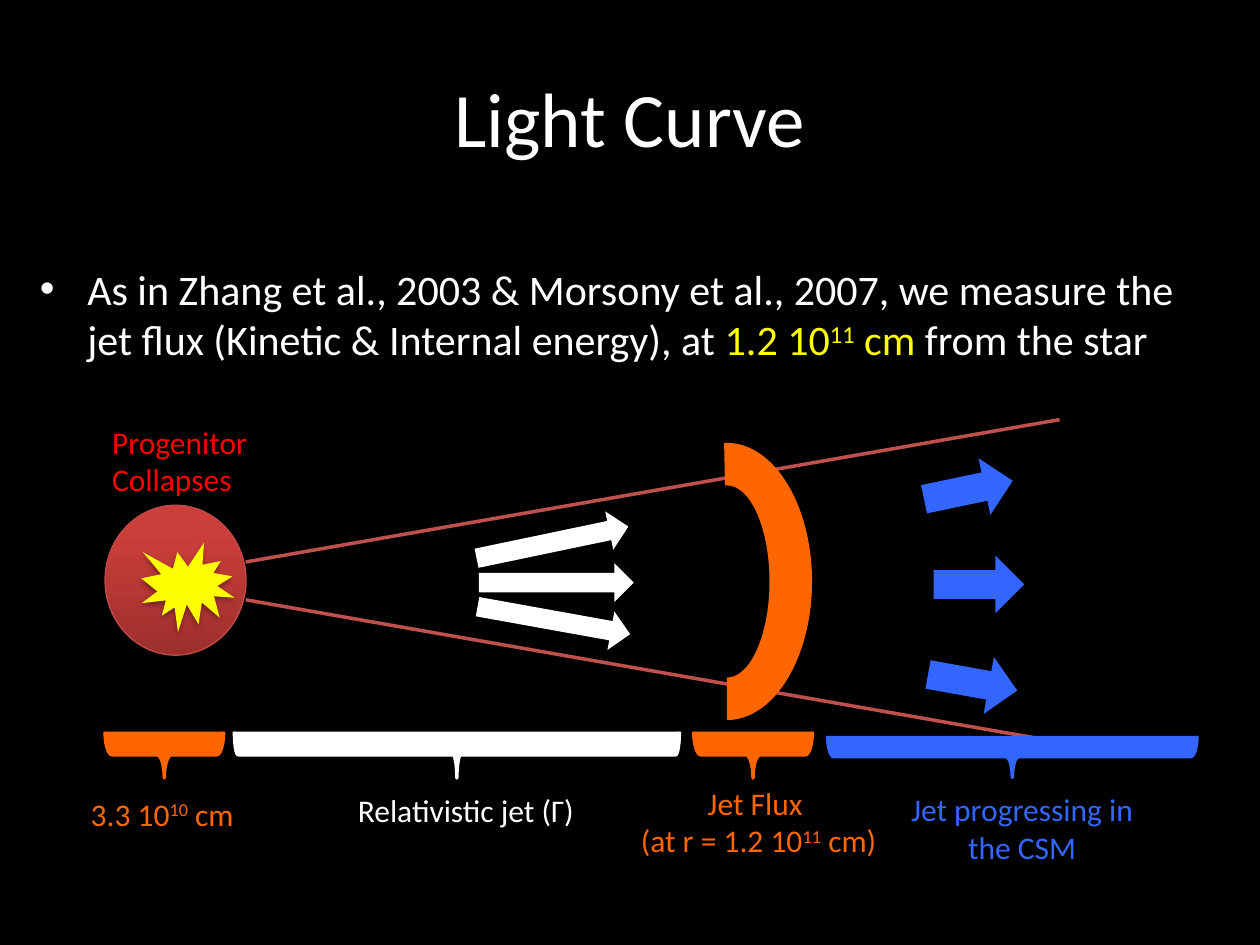
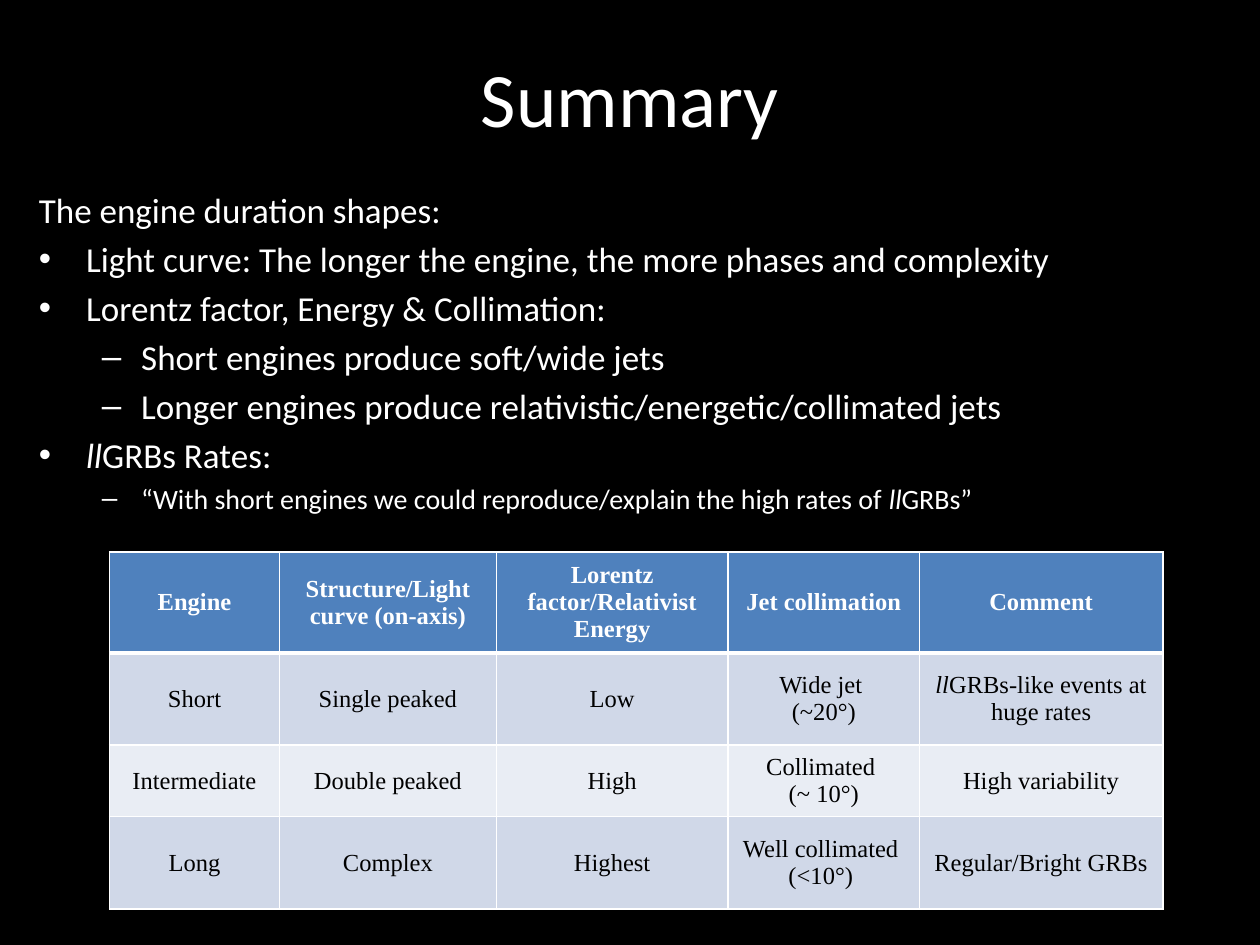
from collections import namedtuple
from dataclasses import dataclass

from lxml import etree
from pptx import Presentation
from pptx.dml.color import RGBColor
from pptx.enum import shapes, text
from pptx.oxml import ns
from pptx.util import Pt

Box = namedtuple("Box", "left top width height")
Run = namedtuple("Run", "text color italic raised", defaults=(None, False, False))
Bullet = namedtuple("Bullet", "mark margin indent")
Stage = namedtuple("Stage", "color brace bend label align paragraphs")


@dataclass(frozen=True)
class Theme:
    background: str = "000000"
    white: str = "FFFFFF"
    yellow: str = "FFFF00"
    red: str = "FF0000"
    orange: str = "FF6600"
    blue: str = "3366FF"
    cone: str = "C0504D"
    star_edge: str = "BF4C48"
    star_dark: str = "9C2F2D"
    star_light: str = "CB3E3A"
    header: str = "4F81BD"
    bands: tuple = ("D0D8E8", "E9EDF4")
    font: str = "Calibri"
    table_font: str = "Times New Roman"
    title_size: int = 44
    lead_size: int = 24
    body_size: int = 20
    label_size: int = 18
    quote_size: int = 16
    table_size: int = 14


THEME = Theme()
SHAPE = shapes.MSO_SHAPE
LEFT, CENTER = text.PP_ALIGN.LEFT, text.PP_ALIGN.CENTER
PLAIN = Bullet(None, 0, 0)
DOT = Bullet("•", 27, -27)
DASH = Bullet("–", 58.5, -22.5)


def rgb(color):
    return RGBColor.from_string(color)


def points(box):
    return [Pt(value) for value in box]


def inside(box, left, top, width, height):
    return Box(box.left + left, box.top + top, width, height)


def add_runs(paragraph, runs, size, color, font=THEME.font, bold=False):
    for item in runs:
        run = paragraph.add_run()
        run.text = item.text
        run.font.name = font
        run.font.size = Pt(size)
        run.font.bold = bold
        run.font.italic = item.italic
        run.font.color.rgb = rgb(item.color or color)
        if item.raised:
            run._r.get_or_add_rPr().set("baseline", "30000")


def fill_paragraphs(frame, paragraphs, size, color, align, **style):
    for index, runs in enumerate(paragraphs):
        paragraph = frame.add_paragraph() if index else frame.paragraphs[0]
        paragraph.alignment = align
        add_runs(paragraph, runs, size, color, **style)


def add_label(slide, box, paragraphs, color, align=LEFT):
    frame = slide.shapes.add_textbox(*points(box)).text_frame
    frame.word_wrap = True
    fill_paragraphs(frame, paragraphs, THEME.label_size, color, align)


def add_solid(slide, kind, box, color, rotation=0, adjustments=(), outline=0):
    if rotation in (90, 270):
        box = Box(box.left + (box.width - box.height) / 2,
                  box.top + (box.height - box.width) / 2,
                  box.height, box.width)
    shape = slide.shapes.add_shape(kind, *points(box))
    shape.shadow.inherit = False
    shape.rotation = rotation
    for index, value in enumerate(adjustments):
        shape.adjustments[index] = value
    shape.fill.solid()
    shape.fill.fore_color.rgb = rgb(color)
    if outline:
        shape.line.color.rgb = rgb(color)
        shape.line.width = Pt(outline)
    else:
        shape.line.fill.background()
    return shape


def add_soft_shadow(shape):
    effects = shape._element.spPr.find(ns.qn("a:effectLst"))
    shadow = etree.SubElement(effects, ns.qn("a:outerShdw"), blurRad=str(Pt(3.1)),
                              dist=str(Pt(1.8)), dir="5400000", rotWithShape="0")
    color = etree.SubElement(shadow, ns.qn("a:srgbClr"), val="000000")
    etree.SubElement(color, ns.qn("a:alpha"), val="35000")


def add_titled_slide(presentation, title, box):
    slide = presentation.slides.add_slide(presentation.slide_layouts[5])
    shape = slide.shapes.title
    shape.left, shape.top, shape.width, shape.height = points(box)
    shape.text_frame.vertical_anchor = text.MSO_ANCHOR.MIDDLE
    fill_paragraphs(shape.text_frame, [[Run(title)]], THEME.title_size, THEME.white, CENTER)
    return slide


def draw_body(slide, box, items):
    frame = slide.shapes.add_textbox(*points(box)).text_frame
    frame.word_wrap = True
    for index, (bullet, size, runs) in enumerate(items):
        paragraph = frame.add_paragraph() if index else frame.paragraphs[0]
        paragraph.space_before = Pt(size * 0.2)
        add_runs(paragraph, runs, size, THEME.white)
        if bullet.mark:
            properties = paragraph._p.get_or_add_pPr()
            properties.set("marL", str(Pt(bullet.margin)))
            properties.set("indent", str(Pt(bullet.indent)))
            etree.SubElement(properties, ns.qn("a:buFont"), typeface="Arial")
            etree.SubElement(properties, ns.qn("a:buChar"), char=bullet.mark)


def draw_progenitor(slide, box):
    star = add_solid(slide, SHAPE.OVAL, inside(box, 3, 50.7, 80.6, 85.7), THEME.star_light)
    star.fill.gradient()
    star.fill.gradient_angle = 90
    for stop, color, position in zip(star.fill.gradient_stops,
                                     (THEME.star_dark, THEME.star_light), (0, 0.8)):
        stop.color.rgb = rgb(color)
        stop.position = position
    star.line.color.rgb = rgb(THEME.star_edge)
    star.line.width = Pt(0.75)
    burst = add_solid(slide, SHAPE.EXPLOSION1, inside(box, 23.8, 72.1, 53.3, 51.1), THEME.yellow)
    add_soft_shadow(burst)
    add_label(slide, inside(box, 0, 0, 102, 51),
              [[Run("Progenitor")], [Run("Collapses")]], THEME.red)


def draw_cone(slide, box):
    middle = box.top + box.height / 2
    for side in (-1, 1):
        edge = slide.shapes.add_connector(
            shapes.MSO_CONNECTOR.STRAIGHT,
            Pt(box.left), Pt(middle + side * 10.8),
            Pt(box.left + box.width), Pt(middle + side * box.height / 2))
        edge.line.color.rgb = rgb(THEME.cone)
        edge.line.width = Pt(2)
        etree.SubElement(edge._element.spPr, ns.qn("a:effectLst"))


def draw_arrow_fan(slide, box, color, upper, lower):
    for (across, down), angle in zip((upper, (0, 0), lower), (348.2, 0, 10.2)):
        add_solid(slide, SHAPE.RIGHT_ARROW,
                  inside(box, across, down, box.width, box.height), color, angle)


def draw_flux_front(slide, box):
    add_solid(slide, SHAPE.BLOCK_ARC, box, THEME.orange, 90, (107.286, 0, 0.25))


def draw_stages(slide, box):
    stages = [
        Stage(THEME.orange, (21.1, 0, 67.7, 26.6), 0.15, (0, 32.7, 107.3, 28.8), CENTER,
              [[Run("3.3 10"), Run("10", raised=True), Run(" cm")]]),
        Stage(THEME.white, (95, 0, 254.2, 26.6), 0.08, (158.4, 30.6, 145.4, 28.8), LEFT,
              [[Run("Relativistic jet (Γ)")]]),
        Stage(THEME.orange, (357.5, 0, 67.7, 26.6), 0.15, (304.5, 26.2, 180, 51), CENTER,
              [[Run("Jet Flux ")],
               [Run("(at r = 1.2 10"), Run("11", raised=True), Run(" cm)")]]),
        Stage(THEME.blue, (434, 2.5, 211, 23.8), 0.15, (471.6, 29.8, 146.9, 51), CENTER,
              [[Run("Jet progressing in the CSM")]]),
    ]
    for stage in stages:
        add_solid(slide, SHAPE.LEFT_BRACE, inside(box, *stage.brace), stage.color,
                  270, (stage.bend, 0.5), 2)
        add_label(slide, inside(box, *stage.label), stage.paragraphs, stage.color, stage.align)


def set_borders(cell, widths):
    properties = cell._tc.get_or_add_tcPr()
    for index, (side, width) in enumerate(zip("LRTB", widths)):
        line = etree.Element(ns.qn("a:ln" + side), w=str(Pt(width)))
        fill = etree.SubElement(line, ns.qn("a:solidFill"))
        etree.SubElement(fill, ns.qn("a:srgbClr"), val=THEME.white)
        properties.insert(index, line)


def draw_engine_table(slide, box):
    rows = [
        ["Engine", "Structure/Light curve (on-axis)", "Lorentz factor/Relativist Energy",
         "Jet collimation", "Comment"],
        ["Short", "Single peaked", "Low", "Wide jet \n(~20°)",
         [[Run("ll", italic=True), Run("GRBs-like events at huge rates")]]],
        ["Intermediate", "Double peaked", "High", "Collimated \n(~ 10°)", "High variability"],
        ["Long", "Complex", "Highest", "Well collimated \n(<10°) ", "Regular/Bright GRBs"],
    ]
    table = slide.shapes.add_table(len(rows), len(rows[0]), *points(box)).table
    for column, width in zip(table.columns, (97.2, 123.8, 132.5, 109.4, 139)):
        column.width = Pt(width)
    for row, height in zip(table.rows, (52.8, 52.8, 38, 52.8)):
        row.height = Pt(height)
    for row_index, values in enumerate(rows):
        heading = row_index == 0
        for column_index, value in enumerate(values):
            cell = table.cell(row_index, column_index)
            cell.fill.solid()
            cell.fill.fore_color.rgb = rgb(
                THEME.header if heading else THEME.bands[(row_index - 1) % 2])
            cell.vertical_anchor = text.MSO_ANCHOR.MIDDLE
            set_borders(cell, (1, 1, 3 if row_index == 1 else 1, 3 if heading else 1))
            if isinstance(value, str):
                value = [[Run(line)] for line in value.split("\n")]
            fill_paragraphs(cell.text_frame, value, THEME.table_size,
                            THEME.white if heading else THEME.background, CENTER,
                            font=THEME.table_font, bold=heading)


def build_light_curve(presentation):
    slide = add_titled_slide(presentation, "Light Curve", Box(36, 21.6, 648, 90))
    draw_body(slide, Box(15.8, 146.9, 686.2, 156.2), [
        (DOT, THEME.lead_size, [
            Run("As in Zhang et al., 2003 & Morsony et al., 2007, we measure the jet flux "
                "(Kinetic & Internal energy), at "),
            Run("1.2 10", THEME.yellow), Run("11", THEME.yellow, raised=True),
            Run(" cm ", THEME.yellow), Run("from the star")]),
    ])
    draw_progenitor(slide, Box(57, 238, 102, 136.4))
    draw_cone(slide, Box(140.4, 239.8, 465.1, 184.3))
    draw_arrow_fan(slide, Box(273.6, 321.8, 88.6, 22.3), THEME.white, (-2.2, -23), (-1.4, 21.6))
    draw_flux_front(slide, Box(366.8, 253.1, 97.2, 158.4))
    draw_arrow_fan(slide, Box(533.5, 317.5, 51.8, 33), THEME.blue, (-6, -54), (-3.6, 56))
    draw_stages(slide, Box(39, 418, 645, 80))


def build_summary(presentation):
    slide = add_titled_slide(presentation, "Summary", Box(36, 10, 648, 90))
    size = THEME.body_size
    engine = Run("ll", italic=True)
    draw_body(slide, Box(15.1, 104.4, 704.9, 205.9), [
        (PLAIN, size, [Run("The engine duration shapes:")]),
        (DOT, size, [Run("Light curve: The longer the engine, the more phases and complexity")]),
        (DOT, size, [Run("Lorentz factor, Energy & Collimation:")]),
        (DASH, size, [Run("Short engines produce soft/wide jets")]),
        (DASH, size, [Run("Longer engines produce relativistic/energetic/collimated jets")]),
        (DOT, size, [engine, Run("GRBs Rates:")]),
        (DASH, THEME.quote_size, [
            Run("“With short engines we could reproduce/explain the high rates of "),
            engine, Run("GRBs”")]),
    ])
    draw_engine_table(slide, Box(62.6, 315.4, 601.9, 196.4))


def main():
    presentation = Presentation()
    presentation.slide_width, presentation.slide_height = Pt(720), Pt(540)
    background = presentation.slide_master.background.fill
    background.solid()
    background.fore_color.rgb = rgb(THEME.background)
    build_light_curve(presentation)
    build_summary(presentation)
    presentation.save("out.pptx")


if __name__ == "__main__":
    main()
